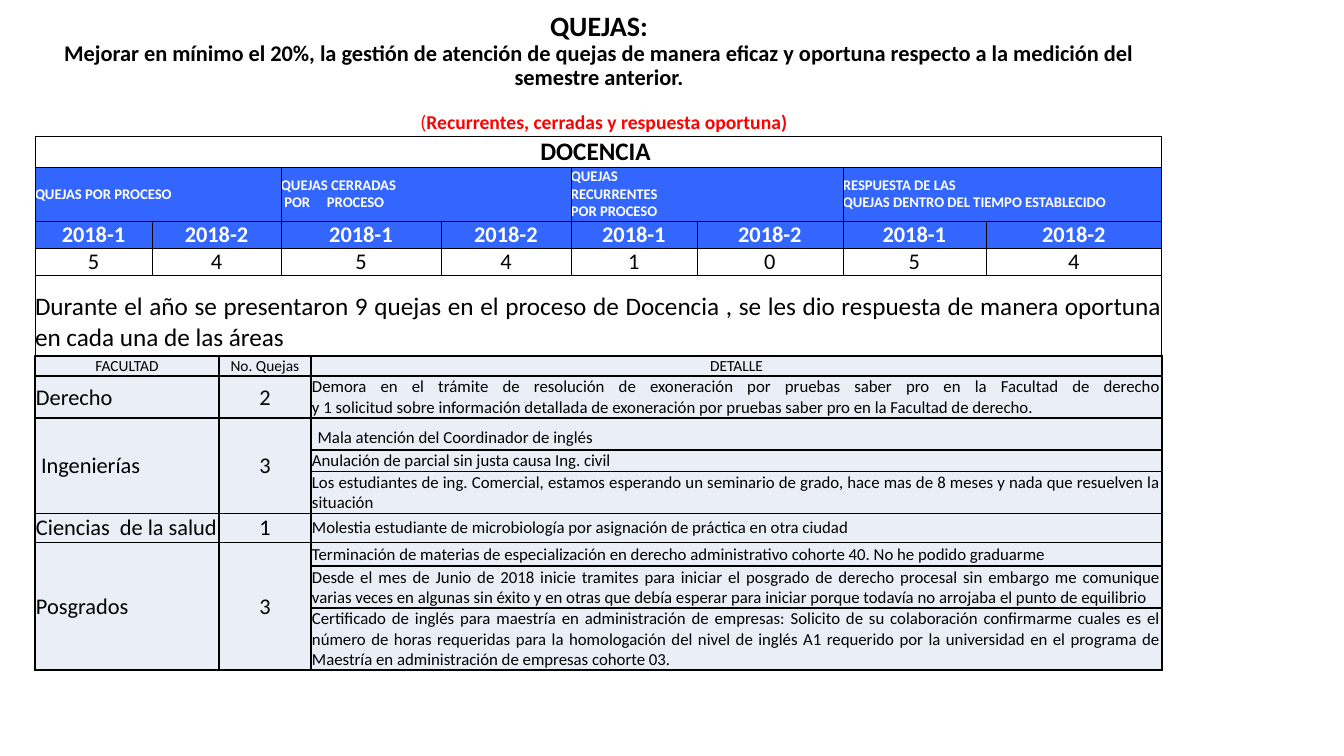
import pptx
import pptx.util
import pptx.dml.color
import pptx.enum.text
import pptx.oxml
import pptx.oxml.ns
from dataclasses import dataclass

ALIGN = pptx.enum.text.PP_ALIGN
ANCHOR = pptx.enum.text.MSO_ANCHOR
EMU_PER_PX = 914400 / 100.8


@dataclass(frozen=True)
class Theme:
    font: str = "Calibri"
    black: str = "000000"
    white: str = "FFFFFF"
    red: str = "FF0000"
    blue: str = "3366FF"
    pale: str = "EAEFF7"
    title: float = 20
    large: float = 18
    body: float = 16
    note: float = 14
    detail: float = 12
    label: float = 11
    header: float = 10.5
    spacer: float = 32


T = Theme()


def px(n):
    return pptx.util.Emu(round(n * EMU_PER_PX))


def add_run(p, text, size, color=T.black, bold=False):
    """Add text to a paragraph, turning each newline into a line break."""
    for i, line in enumerate(text.split("\n")):
        if i:
            p.add_line_break()
        r = p.add_run()
        r.text = line
        r.font.name = T.font
        r.font.size = pptx.util.Pt(size)
        r.font.bold = bold
        r.font.color.rgb = pptx.dml.color.RGBColor.from_string(color)


def set_margins(target, left, top, right, bottom):
    target.margin_left, target.margin_top = px(left), px(top)
    target.margin_right, target.margin_bottom = px(right), px(bottom)


def add_tab_stop(p, position):
    p._p.get_or_add_pPr().append(pptx.oxml.parse_xml(
        f'<a:tabLst {pptx.oxml.ns.nsdecls("a")}>'
        f'<a:tab pos="{px(position)}" algn="l"/></a:tabLst>'))


def style_cell(cell, fill, border, margins, anchor=ANCHOR.MIDDLE):
    tcPr = cell._tc.get_or_add_tcPr()
    for side in ("lnL", "lnR", "lnT", "lnB"):
        tcPr.append(pptx.oxml.parse_xml(
            f'<a:{side} {pptx.oxml.ns.nsdecls("a")} w="{pptx.util.Pt(border)}">'
            f'<a:solidFill><a:srgbClr val="{T.black}"/></a:solidFill></a:{side}>'))
    if fill:
        cell.fill.solid()
        cell.fill.fore_color.rgb = pptx.dml.color.RGBColor.from_string(fill)
    else:
        cell.fill.background()
    set_margins(cell, *margins)
    cell.vertical_anchor = anchor


def write_cell(cell, text, size, align, color=T.black, bold=False):
    p = cell.text_frame.paragraphs[0]
    p.alignment = align
    add_run(p, text, size, color, bold)


def add_grid(s, left, top, widths, heights):
    """Place an unbanded table with the given column and row sizes."""
    table = s.shapes.add_table(len(heights), len(widths), px(left), px(top),
                               px(sum(widths)), px(sum(heights))).table
    table.first_row = table.horz_banding = False
    for column, width in zip(table.columns, widths):
        column.width = px(width)
    for row, height in zip(table.rows, heights):
        row.height = px(height)
    return table


def add_heading(s, left, top, width, height):
    tf = s.shapes.add_textbox(px(left), px(top), px(width), px(height)).text_frame
    tf.word_wrap = True
    set_margins(tf, 10, 0, 10, 0)
    lines = [
        [("QUEJAS:", T.title, T.black, True)],
        [("Mejorar en mínimo el 20%, la gestión de atención de quejas de manera "
          "eficaz y oportuna respecto a la medición del semestre anterior.",
          T.body, T.black, True)],
        [(" ", T.spacer, T.red, False), ("(", T.note, T.red, False),
         ("Recurrentes, cerradas y respuesta oportuna)", T.note, T.red, True)],
    ]
    for i, runs in enumerate(lines):
        p = tf.add_paragraph() if i else tf.paragraphs[0]
        p.alignment = ALIGN.CENTER
        p.line_spacing = 0.9
        for run in runs:
            add_run(p, *run)


def add_summary(s, left, top):
    """Complaint counts per process and half-year."""
    table = add_grid(s, left, top, [117, 129, 160, 130, 126, 146, 143, 176],
                     [31, 54, 27, 27, 80])
    row_fills = [T.white, T.blue, T.blue, None, None]
    for r, fill in enumerate(row_fills):
        for c in range(8):
            # The closing remark sits low in its row
            style_cell(table.cell(r, c), fill, 0.5, (0, 15 if r == 4 else 0, 0, 0))

    # Full-width title and remark
    full_rows = [
        (0, "DOCENCIA ", ALIGN.CENTER, True),
        (4, "Durante el año se presentaron 9 quejas en el proceso de Docencia , "
            "se les dio respuesta de manera oportuna en cada una de las áreas",
         ALIGN.JUSTIFY, False),
    ]
    for r, text, align, bold in full_rows:
        table.cell(r, 0).merge(table.cell(r, 7))
        write_cell(table.cell(r, 0), text, T.large, align, bold=bold)

    # Group headers, each over two half-years
    groups = [
        ["QUEJAS POR PROCESO"],
        ["QUEJAS CERRADAS", " POR\tPROCESO"],
        ["QUEJAS", "RECURRENTES", "POR PROCESO"],
        ["RESPUESTA DE LAS", "QUEJAS DENTRO DEL TIEMPO ESTABLECIDO"],
    ]
    for g, lines in enumerate(groups):
        cell = table.cell(1, 2 * g)
        cell.merge(table.cell(1, 2 * g + 1))
        for i, line in enumerate(lines):
            tf = cell.text_frame
            p = tf.add_paragraph() if i else tf.paragraphs[0]
            if "\t" in line:
                add_tab_stop(p, 46)
            p.alignment = ALIGN.JUSTIFY
            add_run(p, line, T.header, T.white, True)

    # Half-years and counts
    for c, count in enumerate([5, 4, 5, 4, 1, 0, 5, 4]):
        write_cell(table.cell(2, c), f"2018-{c % 2 + 1}", T.body, ALIGN.CENTER,
                   T.white, True)
        write_cell(table.cell(3, c), str(count), T.body, ALIGN.CENTER)


def add_details(s, left, top):
    """Complaints listed by faculty."""
    table = add_grid(s, left, top, [184, 92, 851],
                     [20, 42, 32, 21, 42, 29, 24, 42, 62])
    for r in range(9):
        for c in range(3):
            style_cell(table.cell(r, c), T.pale, 1, (1, 1, 1, 0),
                       ANCHOR.MIDDLE if r else ANCHOR.BOTTOM)
    for c, label in enumerate(["FACULTAD", "No. Quejas", "DETALLE"]):
        write_cell(table.cell(0, c), label, T.label, ALIGN.CENTER)

    faculties = [
        ("Derecho", 2, [
            "Demora en el trámite de resolución de exoneración por pruebas saber pro "
            "en la Facultad de derecho\ny 1 solicitud sobre información detallada de "
            "exoneración por pruebas saber pro en la Facultad de derecho."]),
        (" Ingenierías", 3, [
            "Mala atención del Coordinador de inglés",
            "Anulación de parcial sin justa causa Ing. civil",
            "Los estudiantes de ing. Comercial, estamos esperando un seminario de "
            "grado, hace mas de 8 meses y nada que resuelven la situación"]),
        ("Ciencias  de la salud", 1, [
            "Molestia estudiante de microbiología por asignación de práctica en otra "
            "ciudad"]),
        ("Posgrados", 3, [
            "Terminación de materias de especialización en derecho administrativo "
            "cohorte 40. No he podido graduarme",
            "Desde el mes de Junio de 2018 inicie tramites para iniciar el posgrado de "
            "derecho procesal sin embargo me comunique varias veces en algunas sin "
            "éxito y en otras que debía esperar para iniciar porque todavía no "
            "arrojaba el punto de equilibrio",
            "Certificado de inglés para maestría en administración de empresas: "
            "Solicito de su colaboración confirmarme cuales es el número de horas "
            "requeridas para la homologación del nivel de inglés A1 requerido por la "
            "universidad en el programa de Maestría en administración de empresas "
            "cohorte 03."]),
    ]
    row = 1
    for name, count, details in faculties:
        if len(details) > 1:
            for c in (0, 1):
                table.cell(row, c).merge(table.cell(row + len(details) - 1, c))
        write_cell(table.cell(row, 0), name, T.body, ALIGN.LEFT)
        write_cell(table.cell(row, 1), str(count), T.body, ALIGN.CENTER)
        for detail in details:
            cell = table.cell(row, 2)
            if detail.startswith("Mala"):
                add_run(cell.text_frame.paragraphs[0], " ", T.large)
            write_cell(cell, detail, T.detail, ALIGN.JUSTIFY)
            row += 1


def main():
    prs = pptx.Presentation()
    prs.slide_width, prs.slide_height = px(1344), px(756)
    s = prs.slides.add_slide(prs.slide_layouts[6])
    add_heading(s, 51, 12, 1096, 130)
    add_summary(s, 35, 136)
    add_details(s, 35, 356)
    prs.save("out.pptx")


if __name__ == "__main__":
    main()
